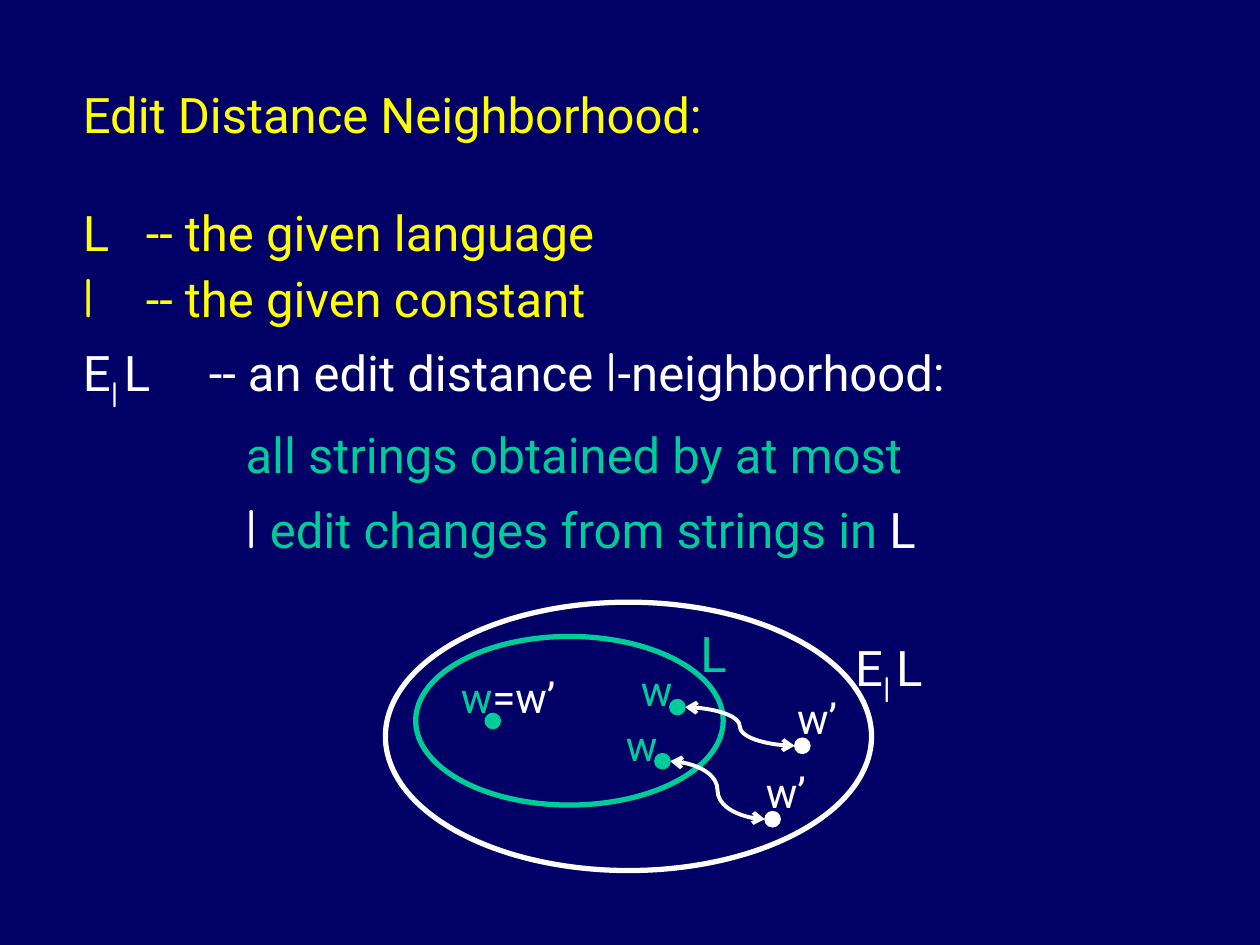
import lxml.etree
import pptx
import pptx.dml.color
import pptx.enum.shapes
import pptx.enum.text
import pptx.oxml.ns
import pptx.util
from pptx.util import Cm, Pt

RGBColor = pptx.dml.color.RGBColor
NAVY = RGBColor(0x00, 0x00, 0x66)
YELLOW = RGBColor(0xFF, 0xFF, 0x00)
GREEN = RGBColor(0x00, 0xCC, 0x99)
WHITE = RGBColor(0xFF, 0xFF, 0xFF)
qn = pptx.oxml.ns.qn

# font, size and baseline of the pieces that differ from the running text
PIECE_STYLES = {
    "symbol": ("Comic Neue", 32, None),
    "subscript": ("Comic Neue", 36, "-25000"),
    "thin gap": ("Roboto", 12, None),
}


def write(paragraph, size, color, pieces):
    """Fill a paragraph with (text, style, color) pieces; None keeps the paragraph's own."""
    paragraph.font.name = "Roboto"
    paragraph.font.size = Pt(size)
    paragraph.font.color.rgb = color
    for text, style, piece_color in pieces:
        run = paragraph.add_run()
        run.text = text
        if piece_color is not None:
            run.font.color.rgb = piece_color
        if style:
            font_name, points, baseline = PIECE_STYLES[style]
            run.font.name = font_name
            run.font.size = Pt(points)
            if baseline:
                run.font._element.set("baseline", baseline)


def add_oval(left, top, width, height, color, line_width, filled):
    oval = slide.shapes.add_shape(pptx.enum.shapes.MSO_SHAPE.OVAL,
                                  Cm(left), Cm(top), Cm(width), Cm(height))
    oval.shadow.inherit = False
    oval.line.color.rgb = color
    oval.line.width = Pt(line_width)
    if filled:
        oval.fill.solid()
        oval.fill.fore_color.rgb = color
    else:
        oval.fill.background()


presentation = pptx.Presentation()
presentation.slide_width = Cm(25.4)
presentation.slide_height = Cm(19.05)
slide = presentation.slides.add_slide(presentation.slide_layouts[1])
slide.background.fill.solid()
slide.background.fill.fore_color.rgb = NAVY

# Title and definitions
title, definitions = slide.shapes.title, slide.placeholders[1]
for placeholder, top, height in ((title, 1.71, 1.3), (definitions, 4.08, 7.2)):
    placeholder.left, placeholder.top = Cm(1.67), Cm(top)
    placeholder.width, placeholder.height = Cm(22), Cm(height)
    frame = placeholder.text_frame
    frame.word_wrap = True
    frame.auto_size = pptx.enum.text.MSO_AUTO_SIZE.NONE
    frame.vertical_anchor = pptx.enum.text.MSO_ANCHOR.TOP
    frame.margin_left = frame.margin_right = frame.margin_top = frame.margin_bottom = 0

heading = title.text_frame.paragraphs[0]
heading.alignment = pptx.enum.text.PP_ALIGN.LEFT
write(heading, 28, YELLOW, [("Edit Distance Neighborhood:", None, None)])

neighborhood_name = [("E", None, None), ("l", "subscript", None),
                     (" ", "thin gap", None)]
# left indent in cm, space before in points, color, pieces
definition_lines = [
    (0, 0, YELLOW, [("L\t-- the given language", None, None)]),
    (0, 0, YELLOW, [("l", "symbol", None), ("\t-- the given constant", None, None)]),
    (0, 0, WHITE, neighborhood_name + [("L\t-- an edit distance ", None, None),
                                       ("l", "symbol", None),
                                       ("-neighborhood:", None, None)]),
    (3.28, 5.6, GREEN, [("all strings obtained by at most", None, None)]),
    (3.28, 5.6, GREEN, [("l", "symbol", WHITE),
                        (" edit changes from strings in ", None, None),
                        ("L", None, WHITE)]),
]
for number, (indent, space, color, pieces) in enumerate(definition_lines):
    frame = definitions.text_frame
    paragraph = frame.add_paragraph() if number else frame.paragraphs[0]
    paragraph.space_before = Pt(space)
    properties = paragraph._p.get_or_add_pPr()
    properties.set("marL", str(Cm(indent)))
    properties.set("indent", "0")
    lxml.etree.SubElement(properties, qn("a:buNone"))
    tab_stops = lxml.etree.SubElement(properties, qn("a:tabLst"))
    lxml.etree.SubElement(tab_stops, qn("a:tab"), pos=str(Cm(1.81)), algn="l")
    write(paragraph, 28, color, pieces)

# Language L inside its neighborhood
add_oval(8.38, 12.83, 6.2, 3.4, GREEN, 3, False)
add_oval(7.77, 12.14, 9.8, 5.41, WHITE, 3, False)

# Words of L, and the words they are edited into
DOT = 0.31
word_dots = [(9.78, 14.38, GREEN)]
edits = [((13.2, 15.19), (15.42, 16.36)), ((13.5, 14.1), (16.02, 14.88))]
for word, edited_word in edits:
    word_dots += [(*word, GREEN), (*edited_word, WHITE)]
    arrow = slide.shapes.add_connector(
        pptx.enum.shapes.MSO_CONNECTOR.CURVE,
        Cm(word[0] + DOT), Cm(word[1] + DOT / 2),
        Cm(edited_word[0]), Cm(edited_word[1] + DOT / 2))
    arrow.line.color.rgb = WHITE
    arrow.line.width = Pt(2.25)
    line = arrow.line._get_or_add_ln()
    for end in ("a:headEnd", "a:tailEnd"):
        lxml.etree.SubElement(line, qn(end), type="arrow")
    lxml.etree.SubElement(arrow._element.spPr, qn("a:effectLst"))
for left, top, color in word_dots:
    add_oval(left, top, DOT, DOT, color, 0.75, True)

# left, top, width, height, size, color, pieces
labels = [
    (13.87, 12.45, 1.07, 1.45, 28, GREEN, [("L", None, None)]),
    (16.99, 12.45, 2.64, 1.45, 28, WHITE, neighborhood_name + [("L", None, None)]),
    (12.37, 14.38, 1.14, 1.27, 24, GREEN, [("w", None, None)]),
    (15.19, 15.32, 1.32, 1.27, 24, WHITE, [("w’", None, None)]),
    (12.67, 13.28, 1.14, 1.27, 24, GREEN, [("w", None, None)]),
    (15.82, 13.84, 1.32, 1.27, 24, WHITE, [("w’", None, None)]),
    (9.04, 13.41, 2.44, 1.27, 24, WHITE, [("w", None, GREEN), ("=w’", None, None)]),
]
for left, top, width, height, size, color, pieces in labels:
    label = slide.shapes.add_textbox(Cm(left), Cm(top), Cm(width), Cm(height))
    label.text_frame.word_wrap = False
    write(label.text_frame.paragraphs[0], size, color, pieces)

presentation.save("out.pptx")
